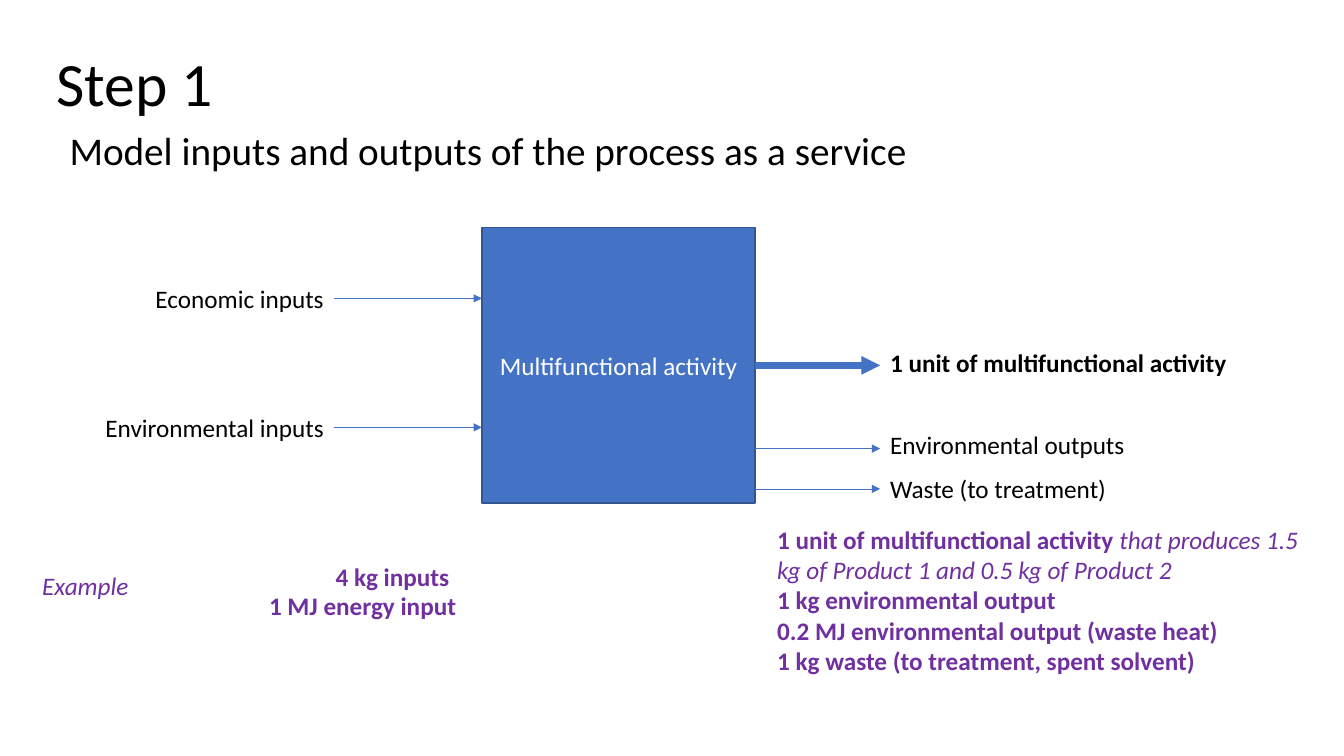
from lxml import etree
from pptx import Presentation
from pptx import util as u
from pptx.dml.color import RGBColor
from pptx.enum import shapes, text
from pptx.oxml.ns import qn

COLORS = {"ink": "000000", "activity": "4472C4", "border": "325491",
          "example": "7030A0", "paper": "FFFFFF"}
FONT = "Calibri"
WIDTH, HEIGHT = u.Inches(13.33), u.Inches(7.5)
CELL = HEIGHT / 75
LABEL_ROWS = 4


def cells(*counts):
    """Turn counts of grid cells into slide lengths."""
    return [round(count * CELL) for count in counts]


def style(run, color, size=18, bold=False, italic=False):
    """Format one run of text."""
    run.font.name = FONT
    run.font.size = u.Pt(size)
    run.font.bold = bold
    run.font.italic = italic
    run.font.color.rgb = RGBColor.from_string(COLORS[color])


def fill_placeholder(holder, box, wording, size, anchor, space_before):
    """Move a template placeholder and give it one plain line."""
    holder.left, holder.top, holder.width, holder.height = cells(*box)
    frame = holder.text_frame
    frame.text = wording
    frame.auto_size = text.MSO_AUTO_SIZE.NONE
    frame.vertical_anchor = anchor
    line = frame.paragraphs[0]
    line.alignment = text.PP_ALIGN.LEFT
    line.line_spacing = 0.9
    line.space_before = u.Pt(space_before)
    style(line.runs[0], "ink", size)
    return line


def add_heading(slide):
    """Write the step and its summary in the template's placeholders."""
    step, summary = slide.placeholders
    fill_placeholder(step, (4.6, 1.3, 115, 14.5), "Step 1", 44,
                     text.MSO_ANCHOR.MIDDLE, 0)
    line = fill_placeholder(summary, (5.9, 12.6, 115, 47.6),
                            "Model inputs and outputs of the process as a service",
                            28, text.MSO_ANCHOR.TOP, 10)
    properties = line._p.get_or_add_pPr()
    properties.set("marL", "0")
    properties.set("indent", "0")
    etree.SubElement(properties, qn("a:buNone"))


def add_label(slide, box, lines, color="ink", wrap=True, align=text.PP_ALIGN.LEFT):
    """Add a text box whose lines are lists of (wording, bold, italic)."""
    frame = slide.shapes.add_textbox(*cells(*box)).text_frame
    frame.word_wrap = wrap
    for index, parts in enumerate(lines):
        line = frame.add_paragraph() if index else frame.paragraphs[0]
        line.alignment = align
        for wording, bold, italic in parts:
            run = line.add_run()
            run.text = wording
            style(run, color, bold=bold, italic=italic)


def add_arrow(slide, start, end, weight=0.5):
    """Draw a straight arrow between two grid points."""
    arrow = slide.shapes.add_connector(shapes.MSO_CONNECTOR.STRAIGHT,
                                       *cells(*start, *end))
    arrow.line.color.rgb = RGBColor.from_string(COLORS["activity"])
    arrow.line.width = u.Pt(weight)
    etree.SubElement(arrow.line._get_or_add_ln(), qn("a:tailEnd"), type="triangle")
    etree.SubElement(arrow._element.spPr, qn("a:effectLst"))
    return arrow


def add_activity(slide, box):
    """Draw the block that stands for the process."""
    activity = slide.shapes.add_shape(shapes.MSO_SHAPE.RECTANGLE, *cells(*box))
    activity.shadow.inherit = False
    activity.fill.solid()
    activity.fill.fore_color.rgb = RGBColor.from_string(COLORS["activity"])
    activity.line.color.rgb = RGBColor.from_string(COLORS["border"])
    activity.line.width = u.Pt(1)
    frame = activity.text_frame
    frame.text = "Multifunctional activity"
    frame.word_wrap = True
    frame.vertical_anchor = text.MSO_ANCHOR.MIDDLE
    frame.paragraphs[0].alignment = text.PP_ALIGN.CENTER
    style(frame.paragraphs[0].runs[0], "paper")
    return activity


def add_process(slide, box):
    """Place the activity with its inputs on the left and outputs on the right."""
    left, top, width, height = box
    block_left, block_width = left + 38.6, 27.1
    block_right = block_left + block_width
    inputs_end, outputs_start = left + 23.9, left + 78.1
    activity = add_activity(slide, (block_left, top, block_width, height))

    inputs = [("Economic inputs", 7, 18.9), ("Environmental inputs", 19.8, 23.9)]
    for wording, row, columns in inputs:
        y = top + row
        add_arrow(slide, (inputs_end, y), (block_left, y))
        add_label(slide, (inputs_end - columns, y - 2, columns, LABEL_ROWS),
                  [[(wording, False, False)]], wrap=False,
                  align=text.PP_ALIGN.RIGHT)

    outputs = [("1 unit of multifunctional activity", height / 2, 2.3, 46, True),
               ("Environmental outputs", 21.9, 2.4, 25.5, False),
               ("Waste (to treatment)", 25.9, 2, 23.7, False)]
    for wording, row, rise, columns, main in outputs:
        y = top + row
        arrow = add_arrow(slide, (block_right, y), (outputs_start, y),
                          4.5 if main else 0.5)
        if main:
            arrow.begin_connect(activity, 3)
        add_label(slide, (outputs_start, y - rise, columns, LABEL_ROWS),
                  [[(wording, main, False)]], wrap=main)


def add_example(slide, box):
    """Place the worked example beneath the process."""
    left, top, width, height = box
    notes = [("Example", 0, 4.6, 21.2, False),
             ("4 kg inputs", 29.1, 3.7, 21.2, True),
             ("1 MJ energy input", 22.5, 6.6, 24, True)]
    for wording, column, row, columns, bold in notes:
        add_label(slide, (left + column, top + row, columns, LABEL_ROWS),
                  [[(wording, bold, not bold)]], "example")

    results = [[("1 unit of multifunctional activity ", True, False),
                ("that produces 1.5 kg of Product 1 and 0.5 kg of Product 2",
                 False, True)],
               [("1 kg environmental output", True, False)],
               [("0.2 MJ environmental output (waste heat)", True, False)],
               [("1 kg waste (to treatment, spent solvent)", True, False)]]
    results_width = 55.4
    add_label(slide, (left + width - results_width, top, results_width, height),
              results, "example")


def main():
    """Build and save the slide."""
    deck = Presentation()
    deck.slide_width, deck.slide_height = WIDTH, HEIGHT
    slide = deck.slides.add_slide(deck.slide_layouts[1])
    add_heading(slide)
    add_process(slide, (9.2, 22.6, 124.1, 27.3))
    add_example(slide, (3.2, 51.5, 128.3, 16.2))
    deck.save("out.pptx")


if __name__ == "__main__":
    main()
